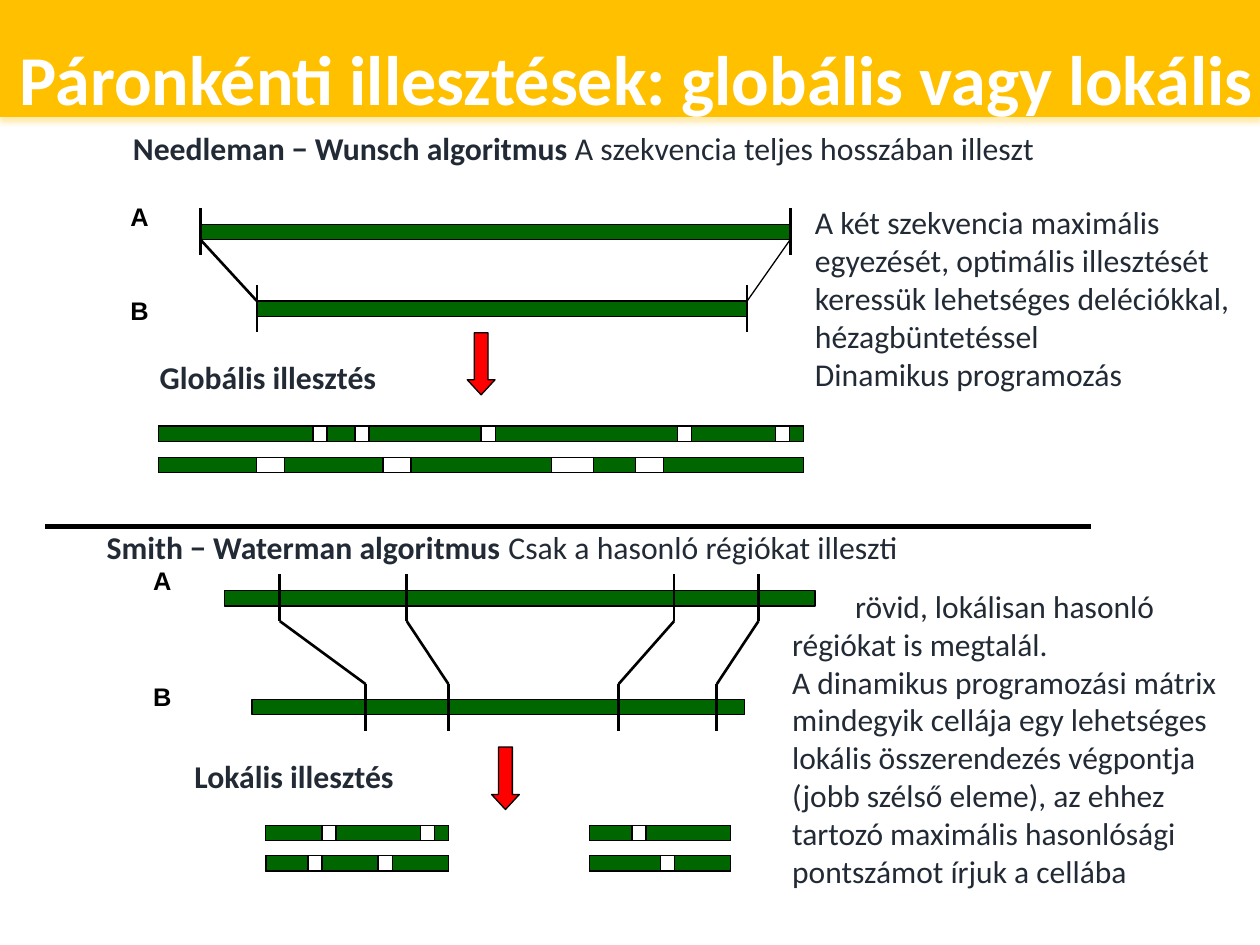
from dataclasses import dataclass
from lxml.etree import SubElement
from pptx import Presentation
from pptx.dml.color import RGBColor
from pptx.enum.shapes import MSO_CONNECTOR, MSO_SHAPE
from pptx.enum.text import MSO_ANCHOR, PP_ALIGN
from pptx.oxml.ns import qn
from pptx.util import Cm, Pt


def paint(code):
    return RGBColor.from_string(code)


def write(para, text, size=18.1, font="Calibri", color="222A35", bold=False):
    run = para.add_run()
    run.text = text
    run.font.size = Pt(size)
    run.font.name = font
    run.font.bold = bold
    run.font.color.rgb = paint(color)


@dataclass
class Board:
    """Draws sequence diagrams on one slide in a shared style."""
    slide: object
    green: str = "006600"
    black: str = "000000"
    red: str = "FF0000"
    gold: str = "FFC000"
    thick: float = 0.31

    def shape(self, kind, x, y, w, h, fill=None, edge=None):
        item = self.slide.shapes.add_shape(kind, Cm(x), Cm(y), Cm(w), Cm(h))
        item.shadow.inherit = False
        if fill:
            item.fill.solid()
            item.fill.fore_color.rgb = paint(fill)
        else:
            item.fill.background()
        if edge:
            item.line.color.rgb = paint(edge)
            item.line.width = Pt(0.75)
        else:
            item.line.fill.background()
        return item

    def banner(self, w, h):
        item = self.shape(MSO_SHAPE.RECTANGLE, 0, 0, w, h, self.gold)
        effect = item._element.spPr.find(qn("a:effectLst"))
        glow = SubElement(effect, qn("a:outerShdw"), blurRad=str(Pt(3.5)),
                          dist=str(Pt(2.2)), dir="5400000", rotWithShape="0")
        tone = SubElement(glow, qn("a:srgbClr"), val=self.gold)
        SubElement(tone, qn("a:alpha"), val="32000")

    def bar(self, x, y, w, fill=True):
        self.shape(MSO_SHAPE.RECTANGLE, x, y, w, self.thick,
                   self.green if fill else None, self.black)

    def track(self, x, y, w, count, parts):
        unit = w / count
        self.bar(x, y, w, False)
        for start, span in parts:
            self.bar(x + start * unit, y, span * unit)

    def arrow(self, x, y, h):
        item = self.shape(MSO_SHAPE.DOWN_ARROW, x, y, 0.56, h, self.red, self.black)
        item.adjustments[0] = 0.5
        item.adjustments[1] = 0.54

    def line(self, x1, y1, x2, y2, width=1.5):
        item = self.slide.shapes.add_connector(
            MSO_CONNECTOR.STRAIGHT, Cm(x1), Cm(y1), Cm(x2), Cm(y2))
        item.line.color.rgb = paint(self.black)
        item.line.width = Pt(width)
        SubElement(item._element.spPr, qn("a:effectLst"))

    def text(self, x, y, w, h, *paras, left=0, first=0):
        frame = self.slide.shapes.add_textbox(Cm(x), Cm(y), Cm(w), Cm(h)).text_frame
        frame.word_wrap = True
        for i, runs in enumerate(paras):
            para = frame.add_paragraph() if i else frame.paragraphs[0]
            for text, style in runs:
                write(para, text, **style)
            if left:
                props = para._p.get_or_add_pPr()
                props.set("marL", str(Cm(left)))
                props.set("indent", str(Cm(0 if i else first)))
        return frame

    def title(self, text):
        frame = self.text(0.13, -0.03, 25.4, 3.18,
                          [(text, dict(size=40, color="FFFFFF", bold=True))])
        frame.margin_left = frame.margin_right = 0
        frame.margin_top = frame.margin_bottom = 0
        frame.vertical_anchor = MSO_ANCHOR.MIDDLE
        frame.paragraphs[0].alignment = PP_ALIGN.CENTER

    def label(self, x, y, w, text, **style):
        self.text(x, y, w, 0.84, [(text, dict(bold=True, **style))])


def top(board):
    for x, y, w in ((4.04, 4.52, 11.89), (5.18, 6.07, 9.88)):
        board.bar(x, y, w)
        for end in (x, x + w):
            board.line(end, y - 0.32, end, y + 0.62)
    board.line(4.04, 4.83, 5.18, 6.07)
    board.line(15.06, 6.07, 15.93, 4.83, 0.75)
    board.track(3.2, 8.59, 13, 46,
                ((0, 11), (12, 2), (15, 8), (24, 13), (38, 6), (45, 1)))
    board.track(3.2, 9.22, 13, 46, ((0, 7), (9, 7), (18, 10), (31, 3), (36, 10)))
    board.arrow(9.42, 6.71, 1.25)
    board.label(2.97, 7.09, 5.5, "Globális illesztés")
    board.text(2.43, 2.47, 21.97, 3.12, [
        ("Needleman − Wunsch algoritmus ", dict(bold=True)),
        ("A szekvencia teljes hosszában illeszt", {})])
    lines = ("A két szekvencia maximális", "egyezését, optimális illesztését",
             "keressük lehetséges deléciókkal, hézagbüntetéssel",
             "Dinamikus programozás")
    board.text(14.73, 3.96, 14.12, 4.14, *([(t, {})] for t in lines), left=1.45)


def low(board):
    board.bar(4.52, 11.91, 11.91)
    board.bar(5.08, 14.1, 9.93)
    for start, end in ((5.64, 7.37), (8.2, 9.04), (13.59, 12.47), (15.29, 14.45)):
        board.line(start, 11.58, start, 12.52)
        board.line(start, 12.52, end, 13.79)
        board.line(end, 13.79, end, 14.73)
    for x, y, w, count, parts in (
            (5.36, 16.64, 3.68, 13, ((0, 4), (5, 6), (12, 1))),
            (5.36, 17.25, 3.68, 13, ((0, 3), (4, 4), (9, 4))),
            (11.89, 16.64, 2.84, 10, ((0, 3), (4, 6))),
            (11.89, 17.25, 2.84, 10, ((0, 5), (6, 4)))):
        board.track(x, y, w, count, parts)
    board.arrow(9.91, 15.06, 1.26)
    board.label(3.67, 15.14, 5.5, "Lokális illesztés")
    board.text(1.9, 10.52, 23.93, 2.64, [
        ("Smith − Waterman algoritmus", dict(bold=True)),
        (" ", dict(size=16.3, font="Arial", color=board.black)),
        ("Csak a hasonló régiókat illeszti", {})])
    lines = ("rövid, lokálisan hasonló régiókat is megtalál.",
             "A dinamikus programozási mátrix mindegyik cellája egy lehetséges "
             "lokális összerendezés végpontja (jobb szélső eleme), az ehhez "
             "tartozó maximális hasonlósági pontszámot írjuk a cellába")
    board.text(14.27, 11.71, 11.18, 7.19, *([(t, dict(size=18))] for t in lines),
               left=1.45, first=1.27)


def main():
    deck = Presentation()
    deck.slide_width, deck.slide_height = Cm(25.4), Cm(19.05)
    board = Board(deck.slides.add_slide(deck.slide_layouts[6]))
    board.banner(25.4, 2.36)
    board.title("Páronkénti illesztések: globális vagy lokális")
    top(board)
    low(board)
    for x, y, mark in ((2.38, 3.94, "A"), (2.38, 5.82, "B"),
                       (2.84, 11.26, "A"), (2.84, 13.61, "B")):
        board.label(x, y, 1, mark, size=14.5, font="Arial", color=board.black)
    board.line(0.91, 10.62, 22, 10.62, 3)
    deck.save("out.pptx")


if __name__ == "__main__":
    main()
